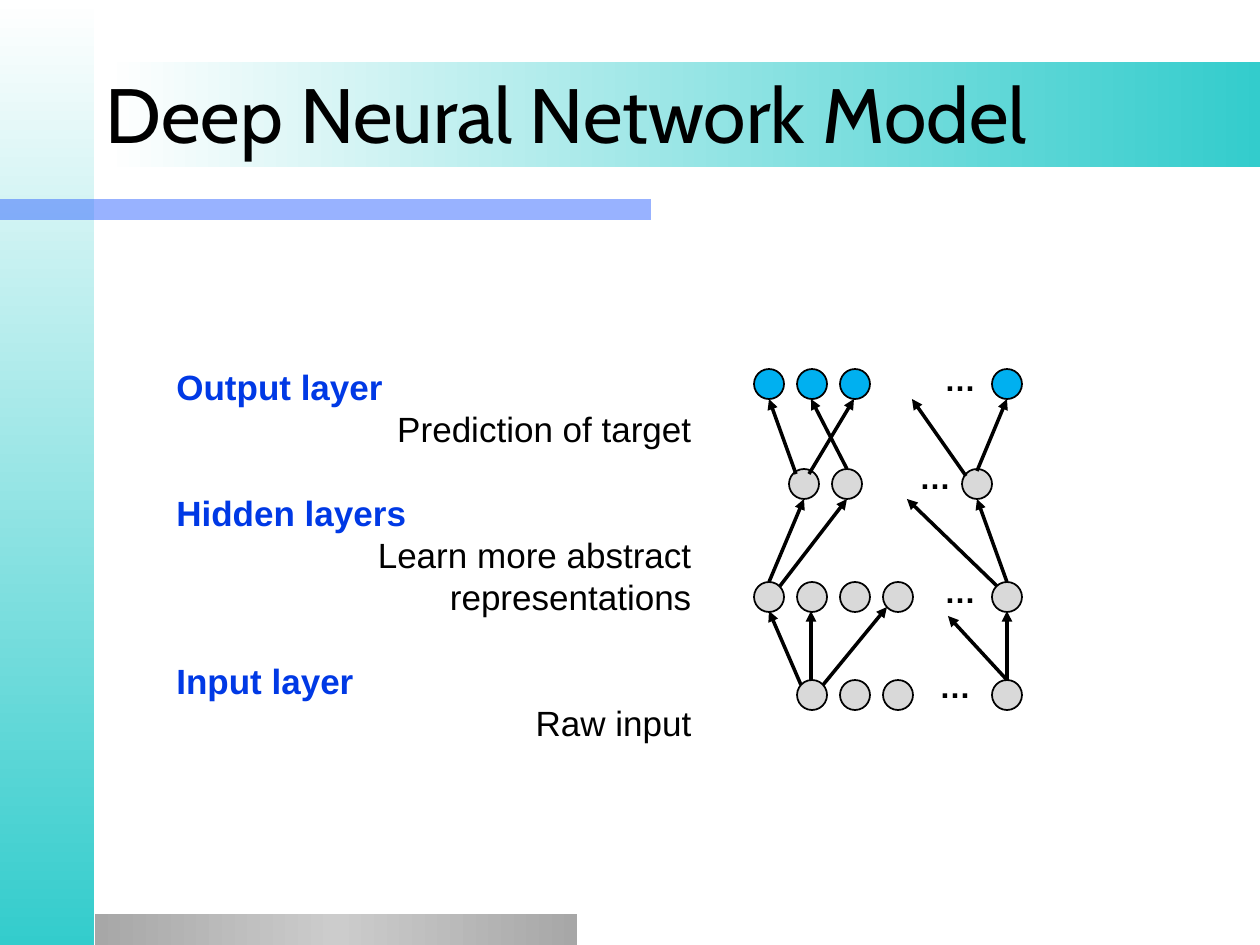
import copy

import pptx
import pptx.dml.color
import pptx.enum.shapes
import pptx.enum.text
import pptx.oxml.ns
import pptx.util
from lxml import etree

PX = 914400 / 126
SHAPES = pptx.enum.shapes.MSO_SHAPE
ALIGN = pptx.enum.text.PP_ALIGN
BLACK, WHITE, TEAL = "000000", "FFFFFF", "33CCCC"
GREY, SKY, BLUE = "D9D9D9", "00B0F0", "0039E5"
NODE_SIZE, NODE_STEP = 30, 43

# Each layer: top, first node's left, node count, last node's left, ellipsis (left, top), fill
LAYERS = [
    (369, 754, 3, 992, (932, 354), SKY),
    (469, 789, 2, 962, (907, 452), GREY),
    (582, 754, 4, 992, (932, 566), GREY),
    (680, 797, 3, 992, (927, 661), GREY),
]

# Arrows: x1, y1, x2, y2
LINKS = [
    # input to first hidden layer
    (801, 685, 769, 611), (811, 680, 811, 611), (823, 685, 887, 607),
    (1007, 680, 948, 616), (1007, 680, 1007, 611),
    # first to second hidden layer
    (769, 582, 804, 499), (780, 586, 847, 499),
    (1007, 582, 977, 499), (997, 586, 907, 499),
    # second hidden layer to output
    (796, 474, 769, 399), (809, 474, 854, 399), (847, 469, 811, 399),
    (977, 471, 1007, 399), (966, 476, 912, 399),
]

DESCRIPTIONS = [
    ("Output layer", "Prediction of target"),
    ("Hidden layers", "Learn more abstract representations"),
    ("Input layer", "Raw input"),
]


def px(*lengths):
    return [pptx.util.Emu(round(length * PX)) for length in lengths]


def colour(hex_string):
    return pptx.dml.color.RGBColor.from_string(hex_string)


def add_xml(parent, tag, **attributes):
    return etree.SubElement(parent, pptx.oxml.ns.qn(tag), attributes)


def set_values(target, values):
    for name, value in values.items():
        setattr(target, name, value)


def add_run(paragraph, text, size, ink, font="Arial", bold=False):
    run = paragraph.add_run()
    run.text = text
    set_values(run.font, {"name": font, "size": pptx.util.Pt(size), "bold": bold})
    run.font.color.rgb = colour(ink)


def add_band(slide, box, stops, angle=0):
    band = slide.shapes.add_shape(SHAPES.RECTANGLE, *px(*box))
    band.shadow.inherit = False
    band.line.fill.background()
    band.fill.gradient()
    band.fill.gradient_angle = angle
    stop_list = band.fill.gradient_stops[0]._gs.getparent()
    while len(stop_list) < len(stops):
        stop_list.append(copy.deepcopy(stop_list[-1]))
    for index, stop in enumerate(band.fill.gradient_stops):
        stop.color.rgb = colour(stops[index])
        stop.position = index / (len(stops) - 1)


def add_rule(slide, box, ink, opacity):
    rule = slide.shapes.add_shape(SHAPES.RECTANGLE, *px(*box))
    rule.shadow.inherit = False
    rule.line.fill.background()
    rule.fill.solid()
    rule.fill.fore_color.rgb = colour(ink)
    ink_xml = rule._element.spPr.find(".//" + pptx.oxml.ns.qn("a:srgbClr"))
    add_xml(ink_xml, "a:alpha", val=str(opacity * 1000))


def add_title(slide, text, box):
    title = slide.shapes.title
    set_values(title, dict(zip(("left", "top", "width", "height"), px(*box))))
    set_values(title.text_frame, {
        "word_wrap": True,
        "auto_size": pptx.enum.text.MSO_AUTO_SIZE.NONE,
        "vertical_anchor": pptx.enum.text.MSO_ANCHOR.MIDDLE,
    })
    heading = title.text_frame.paragraphs[0]
    heading.alignment = ALIGN.LEFT
    add_run(heading, text, 44, BLACK, font="Cabin")
    # Bring the title in front of the bands
    slide.shapes._spTree.append(title._element)


def add_text_frame(slide, box):
    frame = slide.shapes.add_textbox(*px(*box)).text_frame
    frame.word_wrap = True
    return frame


def add_descriptions(slide, box):
    frame = add_text_frame(slide, box)
    for index, (layer_name, role) in enumerate(DESCRIPTIONS):
        heading = frame.add_paragraph() if index else frame.paragraphs[0]
        detail = frame.add_paragraph()
        heading.space_before = pptx.util.Pt(24 if index else 0)
        detail.alignment = ALIGN.RIGHT
        for paragraph in (heading, detail):
            paragraph.line_spacing = pptx.util.Pt(24)
        add_run(heading, layer_name, 20, BLUE, bold=True)
        add_run(detail, role, 20, BLACK)


def add_node(slide, left, top, fill):
    node = slide.shapes.add_shape(SHAPES.OVAL, *px(left, top, NODE_SIZE, NODE_SIZE))
    node.shadow.inherit = False
    node.fill.solid()
    node.fill.fore_color.rgb = colour(fill)
    node.line.color.rgb = colour(BLACK)
    node.line.width = pptx.util.Pt(1)


def add_layer(slide, top, first, count, last, ellipsis, fill):
    for left in [first + i * NODE_STEP for i in range(count)] + [last]:
        add_node(slide, left, top, fill)
    frame = add_text_frame(slide, (*ellipsis, 64, 50))
    add_run(frame.paragraphs[0], "…", 18, BLACK, bold=True)


def add_link(slide, ends):
    link = slide.shapes.add_connector(
        pptx.enum.shapes.MSO_CONNECTOR.STRAIGHT, *px(*ends))
    link.line.color.rgb = colour(BLACK)
    link.line.width = pptx.util.Pt(2)
    add_xml(link.line._get_or_add_ln(), "a:tailEnd", type="triangle")
    add_xml(link._element.spPr, "a:effectLst")


def main():
    deck = pptx.Presentation()
    deck.slide_width, deck.slide_height = px(1260, 945)
    slide = deck.slides.add_slide(deck.slide_layouts[5])

    # Background bands and title
    add_band(slide, (0, 0, 94, 945), (WHITE, TEAL), angle=270)
    add_rule(slide, (0, 199, 651, 21), "3366FF", 50)
    add_band(slide, (95, 914, 482, 31), ("A7A7A7", "CCCCCC", "A7A7A7"))
    add_band(slide, (106, 62, 1154, 105), (WHITE, TEAL))
    add_title(slide, "Deep Neural Network Model", (93, 34, 1071, 158))

    # Layer descriptions
    add_descriptions(slide, (164, 359, 540, 394))

    # Network diagram
    for layer in LAYERS:
        add_layer(slide, *layer)
    for ends in LINKS:
        add_link(slide, ends)

    deck.save("out.pptx")


if __name__ == "__main__":
    main()
